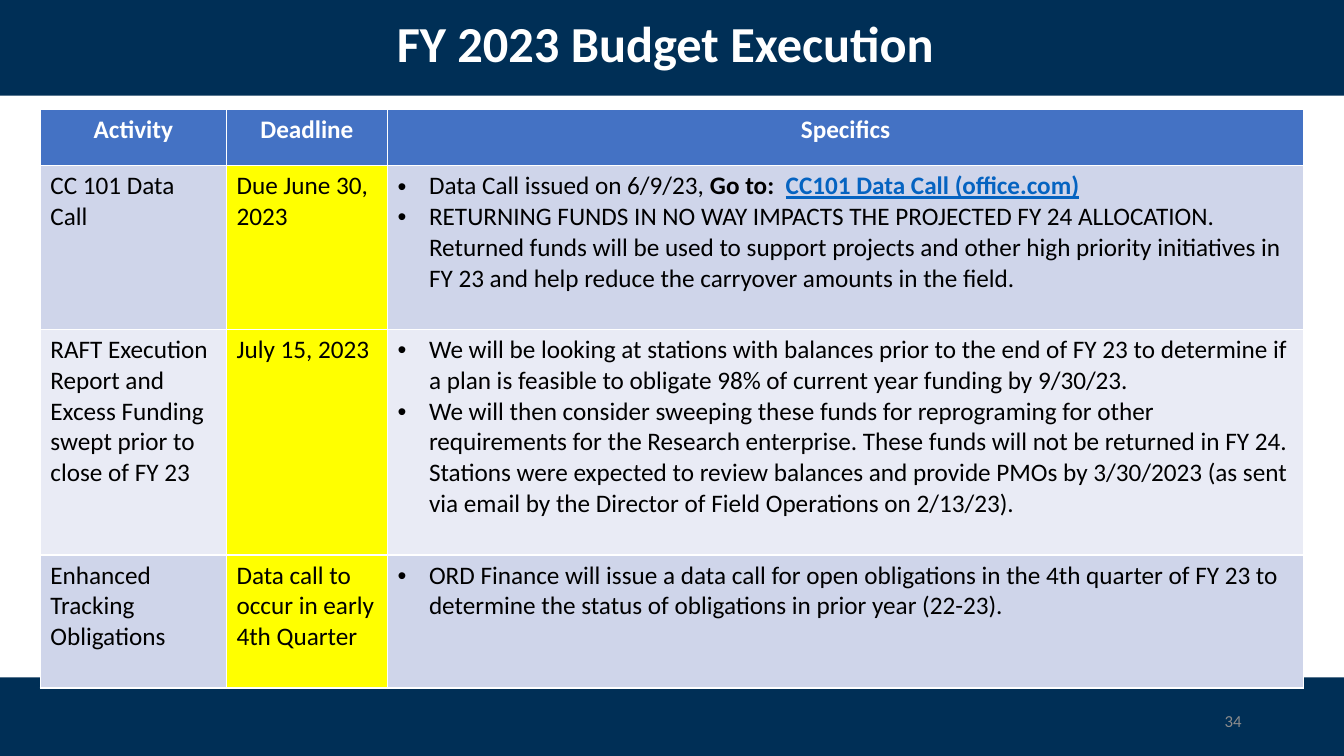
"""Build the FY 2023 budget execution slide with its table of deadlines."""
from dataclasses import dataclass

from lxml.etree import SubElement
from pptx import Presentation
from pptx.dml.color import RGBColor
from pptx.enum.shapes import MSO_SHAPE
from pptx.enum.text import MSO_ANCHOR, PP_ALIGN
from pptx.oxml.ns import qn
from pptx.util import Pt

TITLE = "FY 2023 Budget Execution "
PAGE = "34"
HEADER = ["Activity", "Deadline", "Specifics"]
ROWS = [
    ("CC 101 Data Call", "Due June 30, 2023", [
        [("Data Call issued on 6/9/23, ", {}),
         ("Go to:  ", {"bold": True}),
         ("CC101 Data Call (office.com)", {"bold": True, "underline": True, "color": "0563C1"})],
        "RETURNING FUNDS IN NO WAY IMPACTS THE PROJECTED FY 24 ALLOCATION. Returned funds will be "
        "used to support projects and other high priority initiatives in FY 23 and help reduce the "
        "carryover amounts in the field."]),
    ("RAFT Execution Report and Excess Funding swept prior to close of FY 23", "July 15, 2023", [
        "We will be looking at stations with balances prior to the end of FY 23 to determine if a "
        "plan is feasible to obligate 98% of current year funding by 9/30/23.",
        "We will then consider sweeping these funds for reprograming for other requirements for the "
        "Research enterprise. These funds will not be returned in FY 24.  Stations were expected to "
        "review balances and provide PMOs by 3/30/2023 (as sent via email by the Director of Field "
        "Operations on 2/13/23)."]),
    ("Enhanced Tracking Obligations", "Data call to occur in early 4th Quarter", [
        "ORD Finance will issue a data call for open obligations in the 4th quarter of FY 23 to "
        "determine the status of obligations in prior year (22-23)."]),
]
WIDTH, HEIGHT = 960, 540
BANDS = [(0, 68.4), (483.8, 56.2)]
COLS = [133, 115, 654.5]
HEIGHTS = [40.5, 117, 161, 95]


@dataclass(frozen=True)
class Theme:
    font: str = "Calibri"
    navy: str = "002F56"
    head: str = "4472C4"
    stripes: tuple = ("CFD5EA", "E9EBF5")
    mark: str = "FFFF00"
    white: str = "FFFFFF"
    ink: str = "000000"
    grey: str = "8C8C8C"
    title: int = 36
    body: int = 18
    small: int = 12


T = Theme()


def paint(fill, color):
    fill.solid()
    fill.fore_color.rgb = RGBColor.from_string(color)


def write(tf, paras, size=T.body, color=T.ink, bold=False, align=PP_ALIGN.LEFT, bullet=False):
    tf.word_wrap = True
    for i, para in enumerate(paras):
        p = tf.add_paragraph() if i else tf.paragraphs[0]
        p.alignment = align
        if bullet:
            pPr = p._p.get_or_add_pPr()
            pPr.set("marL", str(Pt(22.5)))
            pPr.set("indent", str(-Pt(22.5)))
            SubElement(pPr, qn("a:buFont"), typeface="Arial")
            SubElement(pPr, qn("a:buChar"), char="•")
        for text, style in [(para, {})] if isinstance(para, str) else para:
            r = p.add_run()
            r.text = text
            r.font.name, r.font.size = T.font, Pt(size)
            r.font.bold = style.get("bold", bold)
            r.font.underline = style.get("underline", False)
            r.font.color.rgb = RGBColor.from_string(style.get("color", color))


def add_bands(s):
    for top, height in BANDS:
        sp = s.shapes.add_shape(MSO_SHAPE.RECTANGLE, 0, Pt(top), Pt(WIDTH), Pt(height))
        sp.shadow.inherit = False
        sp.line.fill.background()
        paint(sp.fill, T.navy)


def add_title(s):
    sp = s.shapes.title
    sp.left, sp.top, sp.width, sp.height = Pt(21), Pt(4.5), Pt(917), Pt(51)
    sp.text_frame.vertical_anchor = MSO_ANCHOR.MIDDLE
    write(sp.text_frame, [TITLE], size=T.title, color=T.white, bold=True, align=PP_ALIGN.CENTER)
    s.shapes.element.append(sp.element)


def add_deadlines(s):
    table = s.shapes.add_table(len(ROWS) + 1, len(COLS), Pt(28.8), Pt(78),
                               Pt(sum(COLS)), Pt(sum(HEIGHTS))).table
    for col, width in zip(table.columns, COLS):
        col.width = Pt(width)
    for row, height in zip(table.rows, HEIGHTS):
        row.height = Pt(height)
    for j, text in enumerate(HEADER):
        cell = table.cell(0, j)
        paint(cell.fill, T.head)
        write(cell.text_frame, [text], color=T.white, bold=True, align=PP_ALIGN.CENTER)
    for i, (activity, deadline, specifics) in enumerate(ROWS):
        stripe = T.stripes[i % 2]
        parts = [([activity], stripe), ([deadline], T.mark), (specifics, stripe)]
        for j, (paras, color) in enumerate(parts):
            cell = table.cell(i + 1, j)
            paint(cell.fill, color)
            write(cell.text_frame, paras, bullet=HEADER[j] == "Specifics")


def add_page_number(s):
    tf = s.shapes.add_textbox(Pt(678), Pt(500.5), Pt(216), Pt(28.8)).text_frame
    tf.vertical_anchor = MSO_ANCHOR.MIDDLE
    write(tf, [PAGE], size=T.small, color=T.grey, align=PP_ALIGN.RIGHT)


def main():
    prs = Presentation()
    prs.slide_width, prs.slide_height = Pt(WIDTH), Pt(HEIGHT)
    s = prs.slides.add_slide(prs.slide_layouts[5])
    add_bands(s)
    add_deadlines(s)
    add_page_number(s)
    add_title(s)
    prs.save("out.pptx")


if __name__ == "__main__":
    main()
